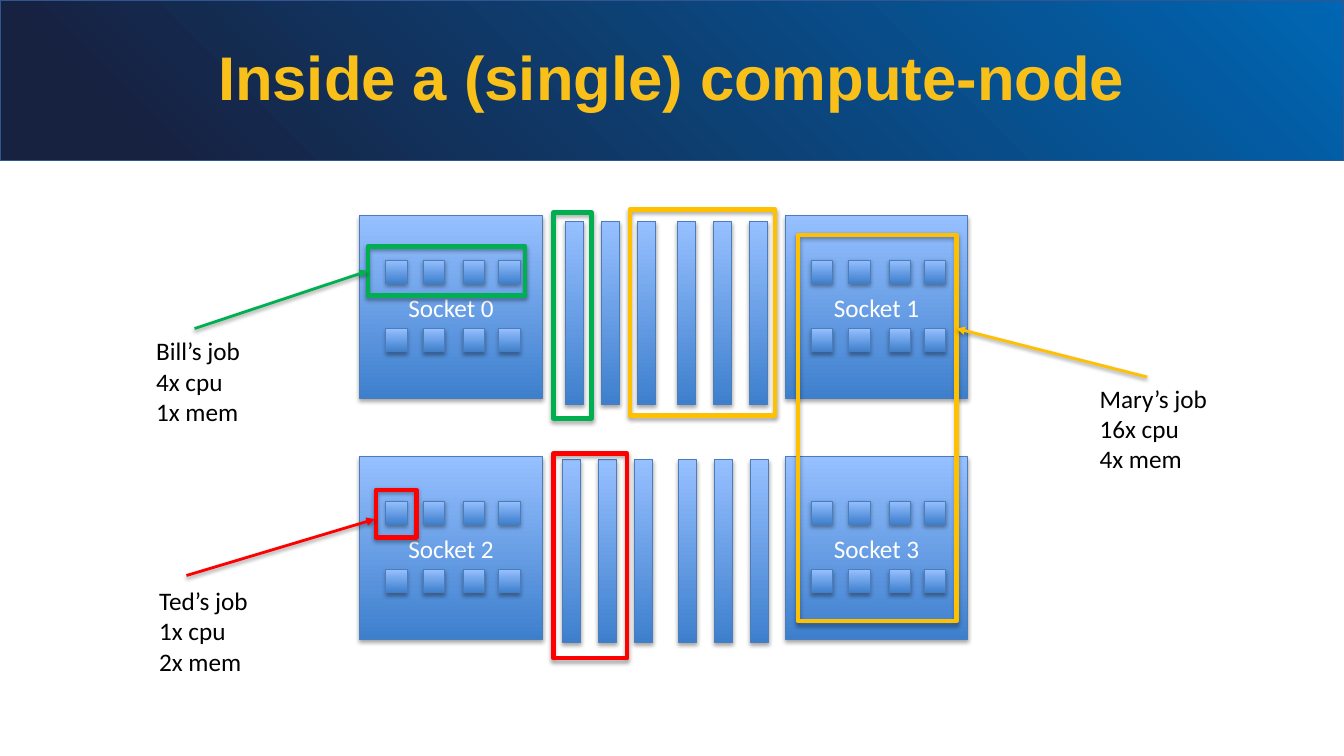
from lxml.etree import SubElement
from pptx import Presentation
from pptx.dml.color import RGBColor
from pptx.enum.shapes import MSO_CONNECTOR as Connector, MSO_SHAPE as Shape
from pptx.enum.text import MSO_ANCHOR as Anchor, MSO_AUTO_SIZE as AutoSize, PP_ALIGN as Align
from pptx.oxml.ns import qn
from pptx.util import Pt

COLORS = {
    "navy": "172140", "blue": "0066B3", "band edge": "325491", "title": "FAC01A",
    "dark": "3E7FCD", "light": "96C0FF", "edge": "4A7DBA",
    "white": "FFFFFF", "black": "000000",
    "green": "00B050", "red": "FF0000", "gold": "FFC000",
}
TITLE = "Inside a (single) compute-node"
WIDTH, HEIGHT, BAND_HEIGHT = 960, 540, 114.5

# Sockets are numbered row by row
SOCKET_LEFTS, SOCKET_TOPS, SOCKET_SIZE = (257, 560.9), (154.1, 326.2), 130.5
CORE_LEFTS, CORE_TOPS = (18.7, 45.5, 74.2, 99.4), (31.7, 80.6)
CORE_WIDTH, CORE_HEIGHT = 15.1, 16.6

# Each memory bank: top edge and the left edge of each group of three modules
MEMORY_BANKS = [(158.2, (403.9, 483.6)), (328.3, (401.8, 484.6))]
MODULES_PER_GROUP, MODULE_STEP, MODULE_WIDTH = 3, 25.8, 13

# Boxes are left, top, width, height; the arrow joins the left side of the
# cpu frame when "joined" is set
JOBS = [
    {"label": "Ted’s job\n1x cpu\n2x mem", "color": "red",
     "label box": (106.6, 414.7, 81.4, 72.7),
     "cpu": (268.6, 349.9, 28.8, 34), "memory": (395.3, 324, 52.6, 146.2),
     "arrow": (133.2, 411.1, 267.8, 370.8), "joined": False},
    {"label": "Bill’s job\n4x cpu\n1x mem", "color": "green",
     "label box": (104.4, 236.2, 75.6, 72.7),
     "cpu": (262.8, 175.9, 112.3, 35.3), "memory": (395.3, 151.9, 27.4, 146.9),
     "arrow": (139, 234.7, 262.8, 193.6), "joined": True},
    {"label": "Mary’s job\n16x cpu\n4x mem", "color": "gold",
     "label box": (778.3, 270, 92.2, 72.7),
     "cpu": (570.2, 167.8, 113, 275.8), "memory": (450, 149.8, 103.7, 146.9),
     "arrow": (819.4, 269.3, 683.3, 234.7), "joined": False},
]


def rgb(name):
    return RGBColor.from_string(COLORS[name])


def points(values):
    return [Pt(value) for value in values]


def add_shadow(item, opacity, distance):
    """Give a shape or connector a soft shadow straight below it."""
    properties = item.element.spPr
    effects = properties.find(qn("a:effectLst"))
    if effects is None:
        effects = SubElement(properties, qn("a:effectLst"))
    shadow = SubElement(effects, qn("a:outerShdw"), blurRad=str(Pt(3.1)),
                        dist=str(Pt(distance)), dir="5400000", rotWithShape="0")
    color = SubElement(shadow, qn("a:srgbClr"), val=COLORS["black"])
    SubElement(color, qn("a:alpha"), val=str(opacity * 1000))


def add_rectangle(page, box, edge, weight):
    shape = page.shapes.add_shape(Shape.RECTANGLE, *points(box))
    shape.line.color.rgb = rgb(edge)
    shape.line.width = Pt(weight)
    shape.shadow.inherit = False
    return shape


def fill_gradient(shape, first, last, angle, start=0):
    shape.fill.gradient()
    shape.fill.gradient_angle = angle
    for stop, name, position in zip(shape.fill.gradient_stops, (first, last), (start, 1)):
        stop.color.rgb = rgb(name)
        stop.position = position


def add_part(page, left, top, width, height):
    """Add a blue hardware block."""
    part = add_rectangle(page, (left, top, width, height), "edge", 0.75)
    fill_gradient(part, "dark", "light", 90)
    add_shadow(part, 35, 1.8)
    return part


def add_frame(page, box, color):
    frame = add_rectangle(page, box, color, 3.25)
    frame.fill.background()
    add_shadow(frame, 35, 1.8)
    return frame


def write(para, text, size, color, font="Calibri"):
    para.text = text
    para.font.size = Pt(size)
    para.font.name = font
    para.font.color.rgb = rgb(color)


def add_title(page):
    band_box = (0, 0, WIDTH, BAND_HEIGHT)
    band = add_rectangle(page, band_box, "band edge", 1)
    fill_gradient(band, "navy", "blue", 45, start=0.1)
    title = page.shapes.title
    band.element.addnext(title.element)
    title.left, title.top, title.width, title.height = points(band_box)
    title.text_frame.vertical_anchor = Anchor.MIDDLE
    para = title.text_frame.paragraphs[0]
    write(para, TITLE, 44, "title", "Arial")
    para.font.bold = True
    para.alignment = Align.CENTER
    para.line_spacing = 0.9


def add_socket(page, number):
    row, column = divmod(number, len(SOCKET_LEFTS))
    left, top = SOCKET_LEFTS[column], SOCKET_TOPS[row]
    socket = add_part(page, left, top, SOCKET_SIZE, SOCKET_SIZE)
    para = socket.text_frame.paragraphs[0]
    write(para, f"Socket {number}", 18, "white")
    para.alignment = Align.CENTER
    for core_top in CORE_TOPS:
        for core_left in CORE_LEFTS:
            add_part(page, left + core_left, top + core_top, CORE_WIDTH, CORE_HEIGHT)


def add_job(page, job):
    cpu_frame = add_frame(page, job["cpu"], job["color"])
    add_frame(page, job["memory"], job["color"])

    arrow = page.shapes.add_connector(Connector.STRAIGHT, *points(job["arrow"]))
    if job["joined"]:
        arrow.end_connect(cpu_frame, 1)
    arrow.line.color.rgb = rgb(job["color"])
    arrow.line.width = Pt(2)
    SubElement(arrow.element.spPr.find(qn("a:ln")), qn("a:tailEnd"), type="triangle")
    add_shadow(arrow, 38, 1.6)

    label = page.shapes.add_textbox(*points(job["label box"]))
    label.text_frame.word_wrap = True
    label.text_frame.auto_size = AutoSize.SHAPE_TO_FIT_TEXT
    write(label.text_frame.paragraphs[0], job["label"], 18, "black")


def main():
    deck = Presentation()
    deck.slide_width, deck.slide_height = points((WIDTH, HEIGHT))
    page = deck.slides.add_slide(deck.slide_layouts.get_by_name("Title Only"))
    add_title(page)
    for number in range(len(SOCKET_LEFTS) * len(SOCKET_TOPS)):
        add_socket(page, number)
    for top, group_lefts in MEMORY_BANKS:
        for left in group_lefts:
            for index in range(MODULES_PER_GROUP):
                add_part(page, left + index * MODULE_STEP, top, MODULE_WIDTH, SOCKET_SIZE)
    for job in JOBS:
        add_job(page, job)
    deck.save("out.pptx")


if __name__ == "__main__":
    main()
